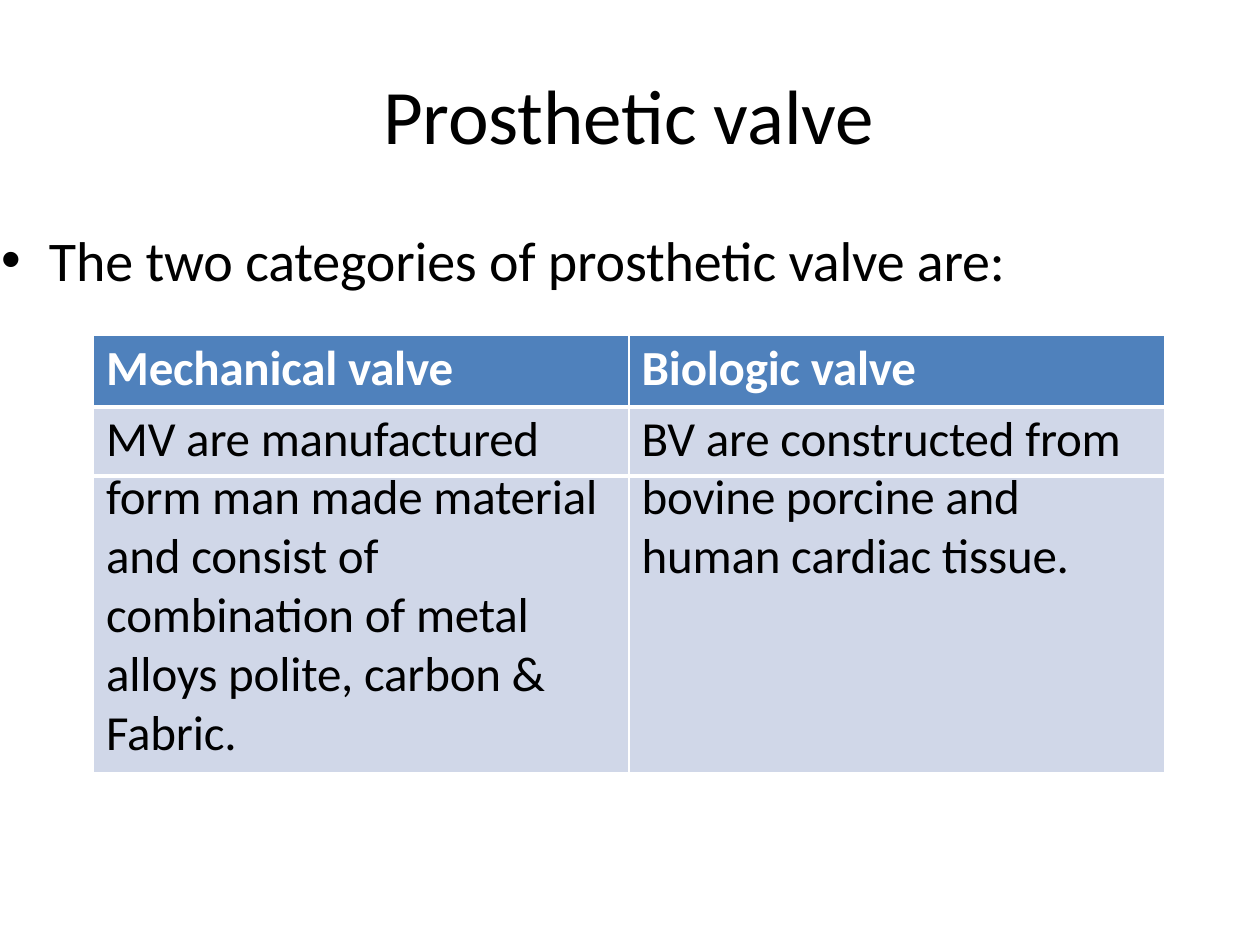
from lxml import etree
from pptx import Presentation
from pptx.dml.color import RGBColor
from pptx.oxml import ns
from pptx.util import Pt

BLACK = RGBColor(0x00, 0x00, 0x00)
WHITE = RGBColor(0xFF, 0xFF, 0xFF)
HEADER_BLUE = RGBColor(0x4F, 0x81, 0xBC)
BODY_BLUE = RGBColor(0xD0, 0xD7, 0xE8)


def write_text(frame, words, size, color=BLACK, bold=False, indent=0,
               hanging=0, bullet=None, line_height=None):
    para = frame.paragraphs[0]
    props = para._p.get_or_add_pPr()
    props.set("marL", str(Pt(indent)))
    props.set("indent", str(Pt(-hanging)))
    if line_height:
        para.line_spacing = Pt(line_height)
    if bullet:
        etree.SubElement(props, ns.qn("a:buFont"), typeface="Arial")
        etree.SubElement(props, ns.qn("a:buChar"), char=bullet)
    span = para.add_run()
    span.text = words
    span.font.name = "Calibri"
    span.font.size = Pt(size)
    span.font.bold = bold
    span.font.color.rgb = color
    span._r.get_or_add_rPr().set("spc", "-10")


def set_borders(cell, **widths):
    """Draw white cell borders; a width of 0 hides that side."""
    props = cell._tc.get_or_add_tcPr()
    for place, (side, width) in enumerate(widths.items()):
        line = etree.Element(ns.qn(f"a:ln{side}"), w=str(Pt(width)))
        if width:
            fill = etree.SubElement(line, ns.qn("a:solidFill"))
            etree.SubElement(fill, ns.qn("a:srgbClr"), val=str(WHITE))
        else:
            etree.SubElement(line, ns.qn("a:noFill"))
        props.insert(place, line)


deck = Presentation()
deck.slide_width, deck.slide_height = Pt(720), Pt(540)
page = deck.slides.add_slide(deck.slide_layouts[6])

# Title and introduction
headings = [
    ((218.2, 36.7, 364.3, 54.7), "Prosthetic valve", dict(size=44, indent=0.7)),
    ((0, 126.7, 665.3, 39.6), "The two categories of prosthetic valve are:",
     dict(size=32, indent=28, hanging=27.3, bullet="•")),
]
for bounds, words, style in headings:
    box = page.shapes.add_textbox(*map(Pt, bounds))
    frame = box.text_frame
    frame.word_wrap = True
    frame.margin_left = frame.margin_right = frame.margin_bottom = 0
    frame.margin_top = Pt(2)
    write_text(frame, words, **style)

# Valve comparison: each body line has its own row
lines = [
    ("Mechanical valve", "Biologic valve"),
    ("MV are manufactured", "BV are constructed from"),
    ("form man made material", "bovine porcine and"),
    ("and consist of", "human cardiac tissue."),
    ("combination of metal", ""),
    ("alloys polite, carbon &", ""),
    ("Fabric.", ""),
]
row_heights = [41, 39.6] + [33.8] * 4 + [34.6]
rules = [1, 3, 3, 0, 0, 0, 0, 1]  # horizontal borders, from top to bottom

table = page.shapes.add_table(len(lines), 2, Pt(53.5), Pt(191.5), Pt(612),
                              Pt(sum(row_heights))).table
table.first_row = table.horz_banding = False
for row, (words_in_row, height) in enumerate(zip(lines, row_heights)):
    table.rows[row].height = Pt(height)
    is_header = row == 0
    for column, words in enumerate(words_in_row):
        cell = table.cell(row, column)
        cell.margin_left = cell.margin_right = cell.margin_bottom = 0
        cell.margin_top = Pt(2 if row < 2 else 0)
        cell.fill.solid()
        cell.fill.fore_color.rgb = HEADER_BLUE if is_header else BODY_BLUE
        set_borders(cell, L=1, R=1, T=rules[row], B=rules[row + 1])
        if words:
            write_text(cell.text_frame, words, 28, bold=is_header, indent=7.2,
                       color=WHITE if is_header else BLACK,
                       line_height=29.4 if row > 1 else None)

deck.save("out.pptx")
